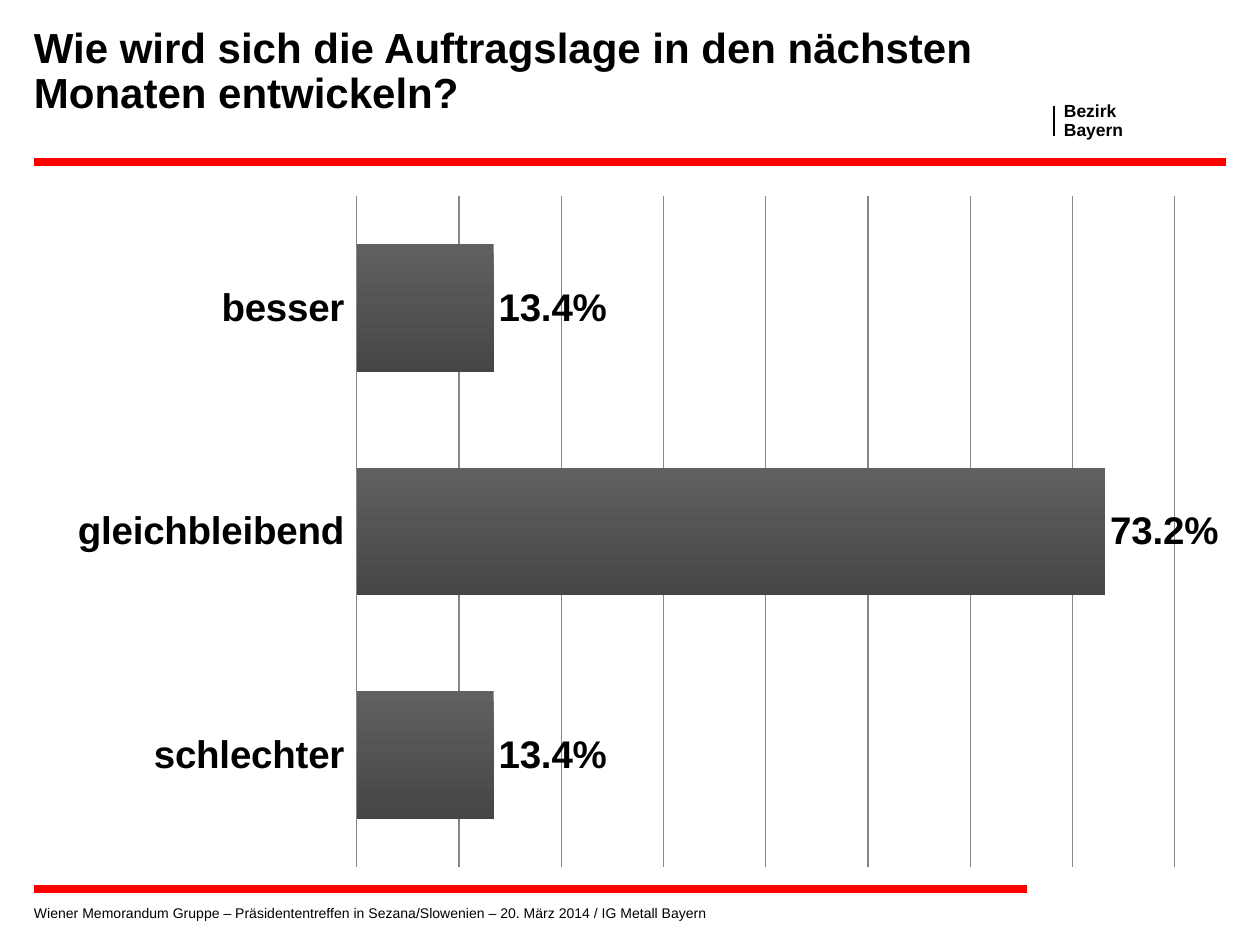
from dataclasses import dataclass

from lxml.etree import SubElement
from pptx import Presentation
from pptx.chart.data import CategoryChartData
from pptx.dml.color import RGBColor
from pptx.enum.chart import XL_CHART_TYPE as ChartType
from pptx.enum.chart import XL_LABEL_POSITION as LabelPosition
from pptx.enum.chart import XL_TICK_LABEL_POSITION as TickLabelPosition
from pptx.enum.chart import XL_TICK_MARK as TickMark
from pptx.enum.shapes import MSO_CONNECTOR as Connector
from pptx.oxml.ns import qn
from pptx.util import Pt

TITLE = "Wie wird sich die Auftragslage in den nächsten Monaten entwickeln?"
DISTRICT = "Bezirk\vBayern"
FOOTER = ("Wiener Memorandum Gruppe – Präsidententreffen in Sezana/Slowenien"
          " – 20. März 2014 / IG Metall Bayern")
OUTLOOK = {"besser": 0.134, "gleichbleibend": 0.732, "schlechter": 0.134}

SLIDE_SIZE = (1260, 945)
LEFT = 34
RULES = [  # start, end, colour name, width in points
    ((LEFT, 162), (1226, 162), "accent", 4.5),
    ((1054, 106), (1054, 136), "ink", 0.8),
    ((LEFT, 889), (1027, 889), "accent", 4.5),
]
CHART_BOX = (LEFT, 175, 1191, 714)
PLOT_AREA = {"x": 0.271, "y": 0.03, "w": 0.687, "h": 0.939}


@dataclass(frozen=True)
class Theme:
    font: str = "Arial"
    ink: str = "000000"
    accent: str = "FF0000"
    grid: str = "868686"
    bar_top: str = "606060"
    bar_bottom: str = "464646"
    title: int = 24
    label: int = 22
    chart: int = 18
    district: int = 10
    footer: int = 8


THEME = Theme()


def px(length):
    return round(length * 914400 / 126)


def rgb(name):
    return RGBColor.from_string(getattr(THEME, name))


def style_font(font, size, bold=False):
    font.name = THEME.font
    font.size = Pt(size)
    font.bold = bold
    font.color.rgb = rgb("ink")


def add_text(slide, text, box, *, size, leading, bold=False, wrap=True):
    frame = slide.shapes.add_textbox(*map(px, box)).text_frame
    frame.margin_left = frame.margin_right = 0
    frame.margin_top = frame.margin_bottom = 0
    frame.word_wrap = wrap
    paragraph = frame.paragraphs[0]
    paragraph.text = text
    paragraph.line_spacing = Pt(leading)
    for run in paragraph.runs:
        style_font(run.font, size, bold)


def add_rule(slide, start, end, color, width):
    rule = slide.shapes.add_connector(Connector.STRAIGHT, *map(px, start + end))
    rule.line.color.rgb = rgb(color)
    rule.line.width = Pt(width)
    SubElement(rule._element.spPr, qn("a:effectLst"))


def place_plot(chart):
    """Fix the inner plot area as fractions of the chart."""
    plot_area = chart._chartSpace.chart.plotArea
    for layout in plot_area.findall(qn("c:layout")):
        plot_area.remove(layout)
    layout = SubElement(plot_area, qn("c:layout"))
    plot_area.insert(0, layout)
    manual = SubElement(layout, qn("c:manualLayout"))
    settings = {"layoutTarget": "inner", "xMode": "edge", "yMode": "edge", **PLOT_AREA}
    for tag, value in settings.items():
        SubElement(manual, qn(f"c:{tag}"), val=str(value))


def style_axes(chart):
    categories = chart.category_axis
    categories.reverse_order = True
    categories.major_tick_mark = categories.minor_tick_mark = TickMark.NONE
    categories.tick_label_position = TickLabelPosition.LOW
    categories.format.line.fill.background()
    style_font(categories.tick_labels.font, THEME.label, bold=True)

    values = chart.value_axis
    values.minimum_scale, values.maximum_scale, values.major_unit = 0, 0.8, 0.1
    values.tick_labels.number_format = "0.0%"
    values.tick_labels.number_format_is_linked = False
    values.has_major_gridlines = True
    values.major_gridlines.format.line.color.rgb = rgb("grid")
    values.major_gridlines.format.line.width = Pt(0.75)
    values.visible = False


def style_bars(plot):
    plot.gap_width, plot.overlap = 75, -25
    plot.vary_by_categories = False
    series = plot.series[0]
    fill = series.format.fill
    fill.gradient()
    fill.gradient_angle = 270
    for stop, color in zip(fill.gradient_stops, ("bar_top", "bar_bottom")):
        stop.color.rgb = rgb(color)
    series.format.line.fill.background()

    labels = series.data_labels
    labels.show_value = True
    labels.position = LabelPosition.OUTSIDE_END
    labels.number_format = "0.0%"
    labels.number_format_is_linked = False
    style_font(labels.font, THEME.label, bold=True)


def add_outlook_chart(slide):
    data = CategoryChartData(number_format="0.0%")
    data.categories = list(OUTLOOK)
    data.add_series("Series 1", list(OUTLOOK.values()))
    chart = slide.shapes.add_chart(
        ChartType.BAR_CLUSTERED, *map(px, CHART_BOX), data).chart
    chart.has_legend = chart.has_title = False
    style_font(chart.font, THEME.chart)
    style_axes(chart)
    style_bars(chart.plots[0])
    place_plot(chart)


def main():
    presentation = Presentation()
    presentation.slide_width, presentation.slide_height = map(px, SLIDE_SIZE)
    slide = presentation.slides.add_slide(presentation.slide_layouts[6])
    for rule in RULES:
        add_rule(slide, *rule)
    add_text(slide, DISTRICT, (1064, 102, 60, 39),
             size=THEME.district, leading=11, bold=True, wrap=False)
    add_text(slide, FOOTER, (LEFT, 900, 893, 21), size=THEME.footer, leading=12)
    add_text(slide, TITLE, (LEFT, 26, 942, 92),
             size=THEME.title, leading=26, bold=True)
    add_outlook_chart(slide)
    presentation.save("out.pptx")


if __name__ == "__main__":
    main()
